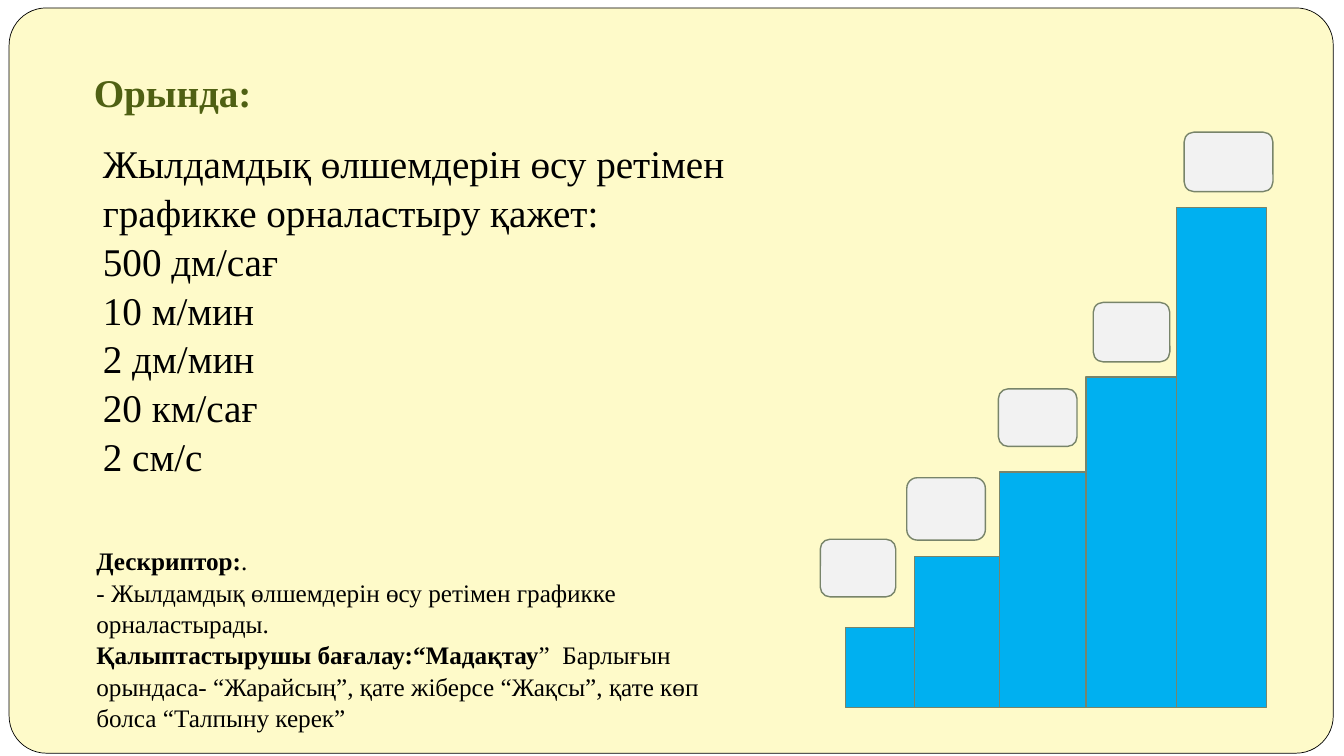
"""Build a slide that asks pupils to sort speeds along rising steps."""
import pptx
import pptx.util
import pptx.dml.color
import pptx.enum.shapes
import pptx.enum.text
import pptx.oxml.ns
import lxml.etree

Cm, Pt = pptx.util.Cm, pptx.util.Pt
KIND = pptx.enum.shapes.MSO_SHAPE
ANCHOR = pptx.enum.text.MSO_ANCHOR

TITLE = [[("Орында:", True)]]
TASK = [[(line, False)] for line in (
    "Жылдамдық өлшемдерін өсу ретімен графикке орналастыру қажет:",
    "500 дм/сағ", "10 м/мин", "2 дм/мин", "20 км/сағ", "2 см/с")]
NOTES = [
    [("Дескриптор:", True), (".", False)],
    [("- Жылдамдық өлшемдерін өсу ретімен графикке орналастырады.", False)],
    [("Қалыптастырушы бағалау:“Мадақтау", True),
     ("”  Барлығын орындаса- “Жарайсың”, қате жіберсе “Жақсы”, "
      "қате көп болса “Талпыну керек”", False)],
]
EDGES = [21.31, 23.06, 25.2, 27.38, 29.66, 31.93]
TOPS = [15.82, 14.02, 11.89, 9.5, 5.23]
BASE = 17.83
CARDS = [(20.68, 13.59, 1.9, 1.45), (22.86, 12.04, 1.98, 1.57),
         (25.17, 9.8, 1.98, 1.45), (27.56, 7.62, 1.93, 1.5),
         (29.85, 3.33, 2.24, 1.5)]
COLORS = {"panel": "FEFAC9", "edge": "000000", "step": "00B0F0", "card": "F2F2F2",
          "rim": "78846A", "title": "4F6013", "text": "000000"}


def hue(name):
    return pptx.dml.color.RGBColor.from_string(COLORS[name])


def write(shape, box, paras, size=28, color="text", anchor=ANCHOR.TOP, space=1.04):
    shape.left, shape.top, shape.width, shape.height = map(Cm, box)
    frame = shape.text_frame
    frame.word_wrap = True
    frame.auto_size = pptx.enum.text.MSO_AUTO_SIZE.NONE
    frame.vertical_anchor = anchor
    for i, runs in enumerate(paras):
        para = frame.paragraphs[0] if i == 0 else frame.add_paragraph()
        para.alignment = pptx.enum.text.PP_ALIGN.LEFT
        para.line_spacing = space
        para.space_before = para.space_after = Pt(0)
        props = para._p.get_or_add_pPr()
        props.set("marL", "0")
        props.set("indent", "0")
        lxml.etree.SubElement(props, pptx.oxml.ns.qn("a:buNone"))
        for text, bold in runs:
            run = para.add_run()
            run.text = text
            run.font.name = "Times New Roman"
            run.font.size = Pt(size)
            run.font.bold = bold
            run.font.color.rgb = hue(color)


def draw(slide, kind, box, fill, line="rim", width=1):
    shape = slide.shapes.add_shape(kind, *map(Cm, box))
    shape.shadow.inherit = False
    shape.fill.solid()
    shape.fill.fore_color.rgb = hue(fill)
    shape.line.color.rgb = hue(line)
    shape.line.width = Pt(width)
    return shape


def main():
    deck = pptx.Presentation()
    deck.slide_width, deck.slide_height = Cm(33.88), Cm(19.05)
    slide = deck.slides.add_slide(deck.slide_layouts[1])

    panel = draw(slide, KIND.ROUNDED_RECTANGLE, (0.23, 0.2, 33.38, 18.78),
                 "panel", "edge", 0.5)
    panel.adjustments[0] = 0.05
    slide.shapes._spTree.insert(2, panel._element)

    write(slide.shapes.title, (2.11, 1.73, 28.78, 1.42), TITLE,
          color="title", anchor=ANCHOR.BOTTOM, space=1)
    slide.shapes.title.text_frame.margin_bottom = Cm(0.25)
    write(slide.placeholders[1], (2.34, 3.33, 16.94, 9.75), TASK)
    notes = (2.18, 13.59, 16.94, 4.83)
    write(slide.shapes.add_textbox(*map(Cm, notes)), notes, NOTES, size=18)

    for left, right, top in zip(EDGES, EDGES[1:], TOPS):
        draw(slide, KIND.RECTANGLE, (left, top, right - left, BASE - top), "step")
    for box in CARDS:
        draw(slide, KIND.ROUNDED_RECTANGLE, box, "card")
    deck.save("out.pptx")


if __name__ == "__main__":
    main()
